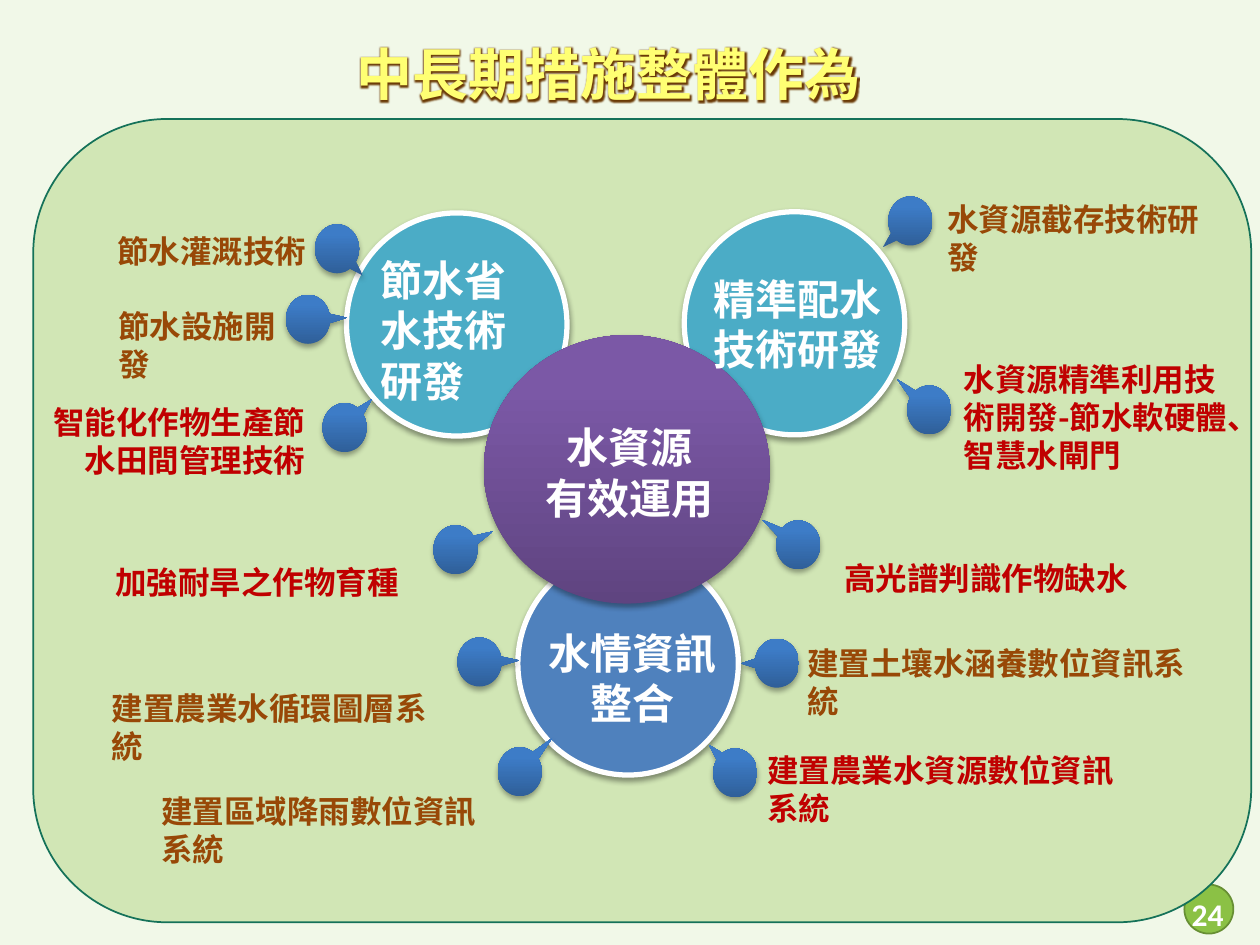
import pptx
import pptx.util
import pptx.dml.color
import pptx.enum.shapes
import pptx.enum.text
import pptx.oxml
import pptx.oxml.ns
from lxml import etree
from collections import namedtuple

Pt = pptx.util.Pt
SHAPE = pptx.enum.shapes.MSO_SHAPE
ALIGN = pptx.enum.text.PP_ALIGN
qn = pptx.oxml.ns.qn

COLORS = {
    "page": "F1F8E8", "panel": "D1E6B5", "panel_edge": "157259",
    "badge": "8BC145", "badge_edge": "678F33",
    "title": "FFFF73", "title_glow": "6B3A05", "white": "FFFFFF",
    "teal": "4BACC6", "blue": "4F81BD",
    "core_low": "5F4480", "core_high": "7B58A6",
    "pin_low": "2F5F99", "pin_high": "3D7CC7",
    "brown": "984807", "red": "C00000", "shadow": "000000",
}
CJK = "Noto Sans CJK SC"
Box = namedtuple("Box", "left top width height")

NOTES = [
    ("節水灌溉技術", "brown", (161, 60.2), (0.588, 0.549), (40.8, 60.9, 124, 29), ALIGN.LEFT),
    ("節水設施開發", "brown", (144.4, 100.5), (0.891, -0.032), (41.5, 104.1, 113.8, 51), ALIGN.LEFT),
    ("智能化作物生產節水田間管理技術", "red", (165.3, 162.4), (0.626, -0.588),
     (-12.5, 158.8, 175, 51), ALIGN.RIGHT),
    ("加強耐旱之作物育種", "red", (228.7, 232.2), (0.858, -0.378), (37.9, 250.2, 178, 29), ALIGN.RIGHT),
    ("建置農業水循環圖層系統", "brown", (242.4, 296.3), (0.904, -0.032),
     (37.9, 322.2, 205.2, 51), ALIGN.LEFT),
    ("建置區域降雨數位資訊系統", "brown", (265.4, 359), (0.739, -0.689), (66, 381.3, 206, 51), ALIGN.LEFT),
    ("水資源截存技術研發", "brown", (488.6, 44.3), (-0.625, 0.537), (515.2, 42.9, 163.4, 51), ALIGN.LEFT),
    ("水資源精準利用技術開發-節水軟硬體、智慧水閘門", "red", (499.4, 152.3), (-0.726, -0.626),
     (524.6, 134.3, 172, 73), ALIGN.LEFT),
    ("高光譜判識作物缺水", "red", (424.5, 229.4), (-0.82, -0.516), (456.2, 248.1, 178, 29), ALIGN.LEFT),
    ("建置土壤水涵養數位資訊系統", "brown", (412.3, 297), (-0.815, 0.006),
     (435.3, 296.3, 234.7, 51), ALIGN.LEFT),
    ("建置農業水資源數位資訊系統", "red", (388.5, 359.7), (-0.6, -0.575),
     (412.3, 357.5, 226.8, 51), ALIGN.LEFT),
]
HUBS = [
    ("teal", (179, 53.7), "節水省水技術研發", (191.2, 73.8, 104.4, 94), ALIGN.LEFT),
    ("teal", (372, 53), "精準配水技術研發", (380.6, 84.6, 112, 65.5), ALIGN.CENTER),
    ("blue", (276.9, 247.4), "水情資訊整合", (286.3, 287, 112.3, 65.5), ALIGN.CENTER),
]


def rgb(key):
    """Return the named palette colour."""
    return pptx.dml.color.RGBColor.from_string(COLORS[key])


def within(box, left, top, width, height):
    """Return a box whose offsets are measured from another box."""
    return Box(box.left + left, box.top + top, width, height)


def add_figure(slide, preset, box, fill, edge=None, edge_width=1, shadow=None):
    """Add a shape with a flat fill, or a gradient when fill is a low-high pair."""
    figure = slide.shapes.add_shape(preset, *map(Pt, box))
    if isinstance(fill, tuple):
        figure.fill.gradient()
        figure.fill.gradient_angle = 90
        for stop, key, position in zip(figure.fill.gradient_stops, fill, (0, 0.8)):
            stop.color.rgb = rgb(key)
            stop.position = position
    else:
        figure.fill.solid()
        figure.fill.fore_color.rgb = rgb(fill)
    if edge:
        figure.line.color.rgb = rgb(edge)
        figure.line.width = Pt(edge_width)
    else:
        figure.line.fill.background()
    figure.shadow.inherit = False
    if shadow:
        effects = figure._element.spPr.find(qn("a:effectLst"))
        outer = etree.SubElement(effects, qn("a:outerShdw"), blurRad=str(Pt(3.1)),
                                 dist=str(Pt(1.8)), dir="5400000", rotWithShape="0")
        tint = etree.SubElement(outer, qn("a:srgbClr"), val=COLORS["shadow"])
        etree.SubElement(tint, qn("a:alpha"), val=str(shadow * 1000))
    return figure


def add_label(slide, box, text, size, color, align=ALIGN.LEFT, font=CJK):
    """Add wrapped bold text, one paragraph per line, and return its frame."""
    frame = slide.shapes.add_textbox(*map(Pt, box)).text_frame
    frame.word_wrap = True
    frame.text = text
    for paragraph in frame.paragraphs:
        paragraph.alignment = align
        paragraph.font.size = Pt(size)
        paragraph.font.bold = True
        paragraph.font.name = font
        paragraph.font.color.rgb = rgb(color)
    return frame


def add_title(slide, box):
    """Add the glowing heading."""
    frame = add_label(slide, box, "中長期措施整體作為", 32, "title", font="Times New Roman")
    heading = frame.paragraphs[0]
    heading.line_spacing = 1.5
    run = heading.runs[0]
    run.font.color.rgb = rgb("title")
    effects = etree.SubElement(run.font._element, qn("a:effectLst"))
    glow = etree.SubElement(effects, qn("a:glow"), rad=str(Pt(3)))
    etree.SubElement(glow, qn("a:srgbClr"), val=COLORS["title_glow"])


def add_page_number(slide, box):
    """Add the round badge."""
    add_figure(slide, SHAPE.OVAL, box, "badge", "badge_edge")


def add_hubs(slide, box):
    """Add the three topic circles and the core circle over them."""
    for color, corner, *_ in HUBS:
        add_figure(slide, SHAPE.OVAL, within(box, *corner, 126, 127.5), color, "white", 3, 38)
    add_figure(slide, SHAPE.OVAL, within(box, 257.5, 123.5, 163.4, 153.4),
               ("core_low", "core_high"), shadow=35)
    for _, _, topic, place, align in HUBS:
        add_label(slide, within(box, *place), topic, 24, "white", align, "Calibri")
    add_label(slide, within(box, 259.6, 169.6, 162, 94), "水資源\n有效運用", 24, "white", ALIGN.CENTER)


def add_notes(slide, box):
    """Add each measure with the callout that points to its circle."""
    for measure, color, corner, tip, place, align in NOTES:
        pin = add_figure(slide, SHAPE.OVAL_CALLOUT, within(box, *corner, 25.2, 28),
                         ("pin_low", "pin_high"), shadow=35)
        pin.adjustments[0], pin.adjustments[1] = tip
        add_label(slide, within(box, *place), measure, 18, color, align)


def main():
    """Build the slide and save it."""
    deck = pptx.Presentation()
    deck.slide_width, deck.slide_height = Pt(720), Pt(540)
    slide = deck.slides.add_slide(deck.slide_layouts[6])
    slide.background.fill.solid()
    slide.background.fill.fore_color.rgb = rgb("page")
    panel = Box(19, 68, 696, 459)
    add_page_number(slide, Box(676.8, 505.5, 28, 28))
    add_figure(slide, SHAPE.ROUNDED_RECTANGLE, panel, "panel", "panel_edge")
    add_label(slide, Box(544.3, 507.6, 162, 29), "24", 18, "white", ALIGN.RIGHT, "Calibri")
    add_title(slide, Box(196.6, 0, 342.7, 65.5))
    add_hubs(slide, panel)
    add_notes(slide, panel)
    deck.save("out.pptx")


if __name__ == "__main__":
    main()
